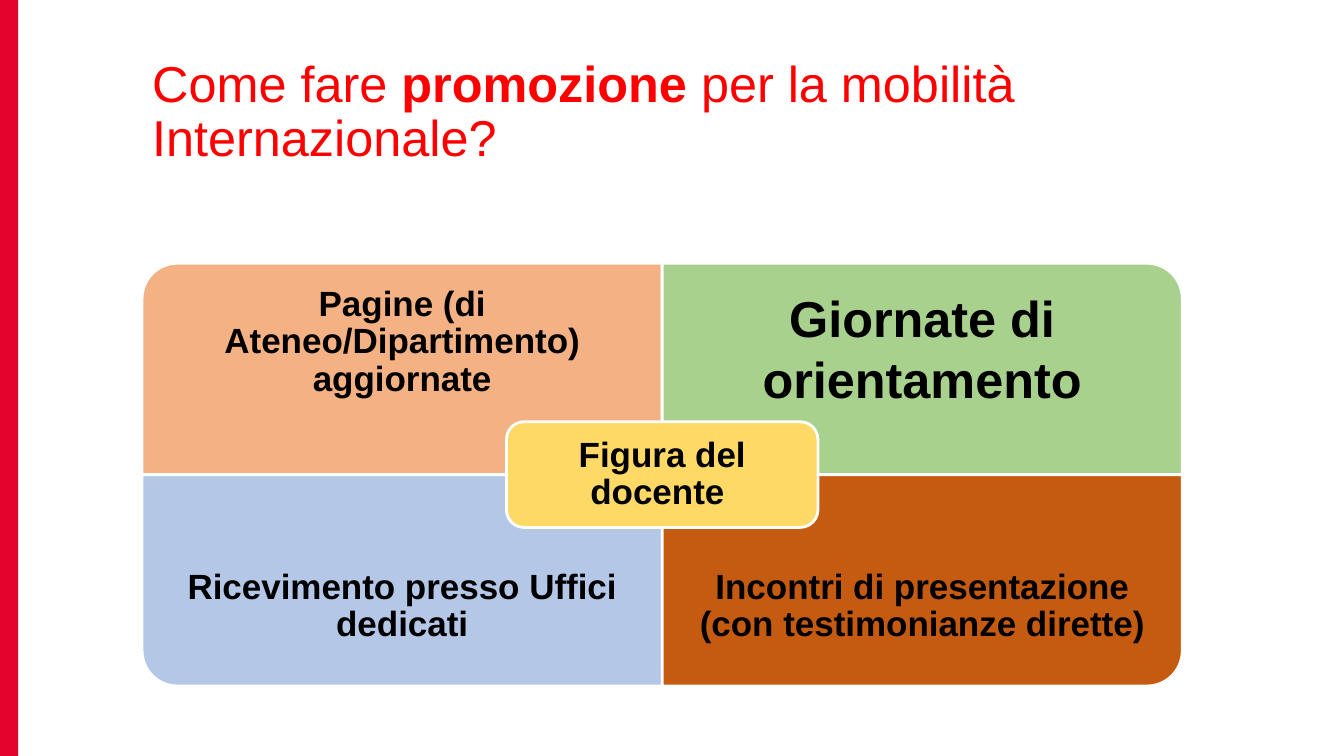
from pptx import Presentation
from pptx.dml.color import RGBColor
from pptx.enum.shapes import MSO_SHAPE
from pptx.enum.text import MSO_ANCHOR, MSO_AUTO_SIZE, PP_ALIGN
from pptx.util import Pt

RECT, ROUNDED = MSO_SHAPE.RECTANGLE, MSO_SHAPE.ROUNDED_RECTANGLE
ONE_ROUND = MSO_SHAPE.ROUND_1_RECTANGLE
LEFT, CENTER = PP_ALIGN.LEFT, PP_ALIGN.CENTER
MIDDLE = MSO_ANCHOR.MIDDLE
NO_AUTOFIT = MSO_AUTO_SIZE.NONE

WHITE = RGBColor(0xFF, 0xFF, 0xFF)
BLACK = RGBColor(0x00, 0x00, 0x00)
RED = RGBColor(0xFF, 0x00, 0x00)
CRIMSON = RGBColor(0xE4, 0x03, 0x2C)
ORANGE = RGBColor(0xF4, 0xB1, 0x83)
GREEN = RGBColor(0xA9, 0xD1, 0x8E)
BLUE = RGBColor(0xB4, 0xC7, 0xE7)
BROWN = RGBColor(0xC5, 0x5A, 0x11)
YELLOW = RGBColor(0xFF, 0xD9, 0x66)


def write(sp, runs, size=25, color=BLACK, align=CENTER, spacing=0.9, margins=(7.2, 7.2)):
    """Fill sp with one paragraph of (text, bold) runs; margins are (sides, top and bottom)."""
    tf = sp.text_frame
    tf.word_wrap = True
    tf.auto_size = NO_AUTOFIT
    tf.vertical_anchor = MIDDLE
    tf.margin_left = tf.margin_right = Pt(margins[0])
    tf.margin_top = tf.margin_bottom = Pt(margins[1])
    p = tf.paragraphs[0]
    p.alignment = align
    p.line_spacing = spacing
    for text, bold in runs:
        r = p.add_run()
        r.text = text
        r.font.name = "Arial"
        r.font.size = Pt(size)
        r.font.bold = bold
        r.font.color.rgb = color


def add_block(kind, x, y, w, h, fill, outlined=True):
    sp = s.shapes.add_shape(kind, Pt(x), Pt(y), Pt(w), Pt(h))
    sp.shadow.inherit = False
    sp.fill.solid()
    sp.fill.fore_color.rgb = fill
    if outlined:
        sp.line.color.rgb = WHITE
        sp.line.width = Pt(2)
    else:
        sp.line.fill.background()
    return sp


prs = Presentation()
prs.slide_width, prs.slide_height = Pt(960), Pt(540)
s = prs.slides.add_slide(prs.slide_layouts[5])

add_block(RECT, 0, 0, 13, 540, CRIMSON, outlined=False)

title = s.shapes.title
title.left, title.top, title.width, title.height = Pt(101.5), Pt(29), Pt(736), Pt(104)
write(title, [("Come fare ", False), ("promozione", True),
              (" per la mobilità Internazionale?", False)],
      size=36, color=RED, align=LEFT, margins=(7.2, 3.6))

# Quadrants: column, row, rotation, fill, text, format
GRID_X, GRID_Y, CELL_W, CELL_H = 101.5, 188, 371.5, 151
TEXT_H = CELL_H * 0.75
SMALL = dict(margins=(13.7, 13.7))
LARGE = dict(size=36, spacing=1.0, margins=(20, 13.7))
quadrants = [
    (0, 0, 270, ORANGE, "Pagine (di Ateneo/Dipartimento) aggiornate", SMALL),
    (1, 0, 0, GREEN, "Giornate di orientamento", LARGE),
    (0, 1, 180, BLUE, "Ricevimento presso Uffici dedicati", SMALL),
    (1, 1, 90, BROWN, "Incontri di presentazione (con testimonianze dirette)", SMALL),
]
for col, row, rotation, fill, text, style in quadrants:
    x, y = GRID_X + col * CELL_W, GRID_Y + row * CELL_H
    # A quarter turn swaps the sides around the same centre
    w, h = (CELL_H, CELL_W) if rotation % 180 else (CELL_W, CELL_H)
    sp = add_block(ONE_ROUND, x + (CELL_W - w) / 2, y + (CELL_H - h) / 2, w, h, fill)
    sp.rotation = rotation
    text_y = y + row * (CELL_H - TEXT_H) + (4 if style is LARGE else 0)
    box = s.shapes.add_textbox(Pt(x), Pt(text_y), Pt(CELL_W), Pt(TEXT_H))
    write(box, [(text, True)], **style)

HUB_W, HUB_H = 222.5, 75.5
hub = add_block(ROUNDED, GRID_X + CELL_W - HUB_W / 2, GRID_Y + CELL_H - HUB_H / 2,
                HUB_W, HUB_H, YELLOW)
write(hub, [("Figura del docente ", True)], margins=(10.8, 10.8))

prs.save("out.pptx")
